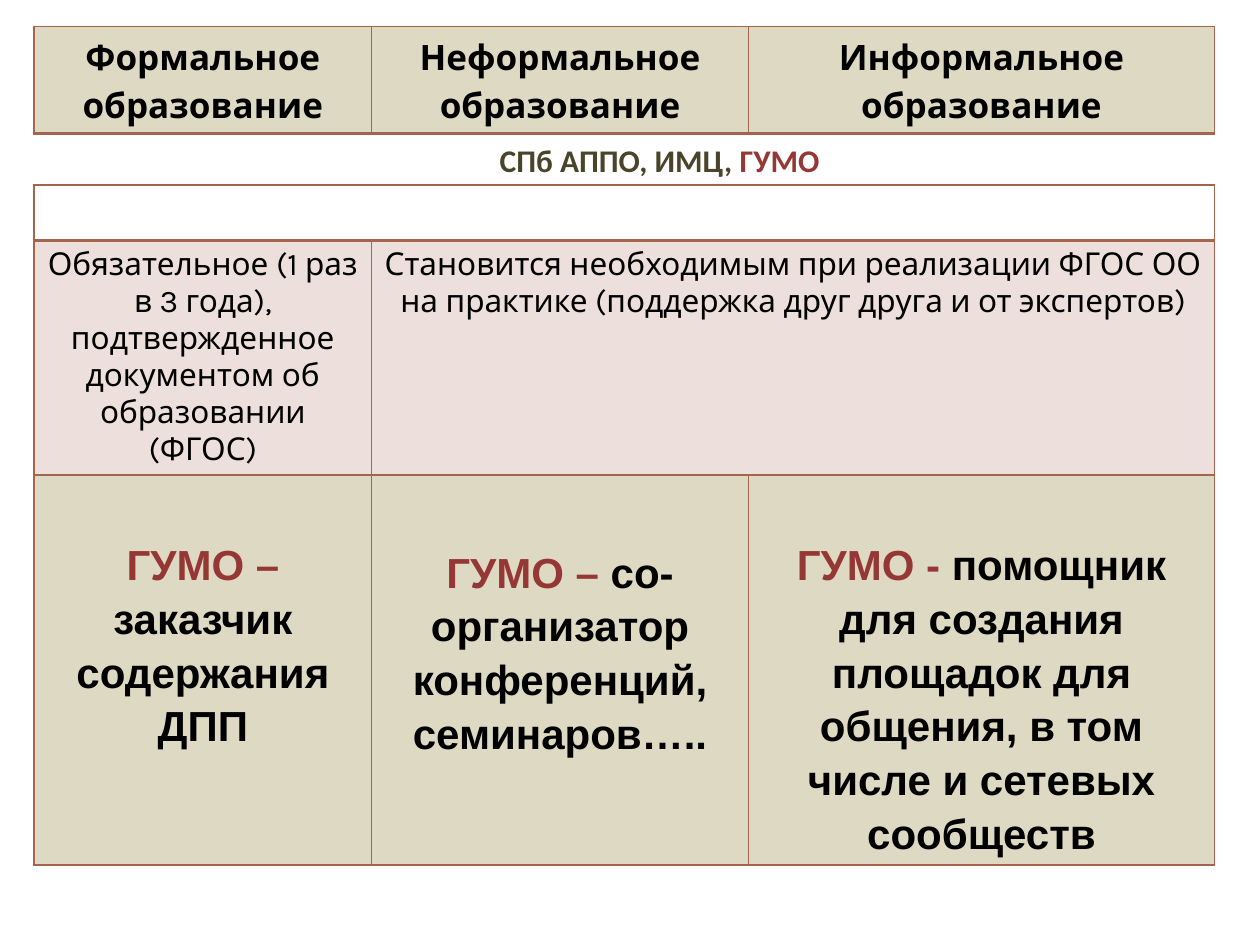
"""Build a slide comparing formal, non-formal and informal education."""
from lxml.etree import fromstring
from pptx import Presentation
from pptx.dml.color import RGBColor
from pptx.enum.text import MSO_AUTO_SIZE, PP_ALIGN
from pptx.util import Inches, Pt

NS = "http://schemas.openxmlformats.org/drawingml/2006/main"
RUST, RED, BLACK, SAND, PINK = "A5644E", "953735", "000000", "DDD9C3", "EDE0DC"


def write(frame, runs, font, size, bold, space=None):
    """Add centred runs of (text, colour) to the first paragraph."""
    para = frame.paragraphs[0]
    para.alignment = PP_ALIGN.CENTER
    para.line_spacing = space
    for text, color in runs:
        run = para.add_run()
        run.text = text
        run.font.name, run.font.size, run.font.bold = font, Pt(size), bold
        run.font.color.rgb = RGBColor.from_string(color)


def grid(top, rows, heavy):
    """Add a bordered table whose row number heavy has a thick bottom line."""
    height = Inches(sum(rows))
    table = slide.shapes.add_table(len(rows), 3, Inches(0.27), Inches(top), Inches(9.37), height).table
    table.first_row = table.horz_banding = False
    for col, width in zip(table.columns, (2.68, 2.99, 3.7)):
        col.width = Inches(width)
    for r, high in enumerate(rows):
        table.rows[r].height = Inches(high)
        for cell in table.rows[r].cells:
            cell.fill.background()
            props = cell._tc.get_or_add_tcPr()
            for i, side in enumerate("LRTB"):
                thick = (side == "B" and r == heavy) or (side == "T" and r == heavy + 1)
                props.insert(i, fromstring(
                    f'<a:ln{side} xmlns:a="{NS}" w="{Pt(2 if thick else 1)}"><a:solidFill>'
                    f'<a:srgbClr val="{RUST}"/></a:solidFill></a:ln{side}>'))
    return table


deck = Presentation()
deck.slide_width, deck.slide_height = Inches(10), Inches(7.5)
slide = deck.slides.add_slide(deck.slide_layouts[6])

main = grid(1.47, (0.44, 1.86, 3.03), 0)
main.cell(0, 0).merge(main.cell(0, 2))
main.cell(1, 1).merge(main.cell(1, 2))
head = grid(0.21, (0.84,), 0)

kinds = ("Формальное", "Неформальное", "Информальное")
tops = [(f"{kind} образование", BLACK) for kind in kinds]
needs = (
    "Обязательное (1 раз в 3 года), подтвержденное документом об образовании (ФГОС)",
    "Становится необходимым при реализации ФГОС ОО на практике (поддержка друг друга и от экспертов)",
)
roles = (
    ("ГУМО – ", "заказчик содержания ДПП", 0.07, 0.48),
    ("ГУМО – ", "со-организатор конференций, семинаров…..", 0.07, 0.54),
    ("ГУМО - ", "помощник для создания площадок для общения, в том числе и сетевых сообществ", 0.1, 0.48),
)

cells = []
for c, run in enumerate(tops):
    cells.append((head.cell(0, c), [run], "Karla", 20, True, 1.15, SAND, 0.07, 0.05))
for c, text in enumerate(needs):
    cells.append((main.cell(1, c), [(text, BLACK)], "Karla", 18, False, None, PINK, 0.1, 0.05))
for c, (name, text, side, top) in enumerate(roles):
    runs = [(name, RED), (text, BLACK)]
    cells.append((main.cell(2, c), runs, "Arial", 24, True, 1.15, SAND, side, top))

for cell, runs, font, size, bold, space, color, side, top in cells:
    cell.fill.solid()
    cell.fill.fore_color.rgb = RGBColor.from_string(color)
    cell.margin_left = cell.margin_right = Inches(side)
    cell.margin_top, cell.margin_bottom = Inches(top), Inches(0.05)
    write(cell.text_frame, runs, font, size, bold, space)

label = slide.shapes.add_textbox(Inches(3.5), Inches(1.07), Inches(3.47), Inches(0.4)).text_frame
label.word_wrap = True
label.auto_size = MSO_AUTO_SIZE.SHAPE_TO_FIT_TEXT
write(label, [("СПб АППО, ИМЦ, ", "4A452A"), ("ГУМО", RED)], "Calibri", 18, True)

deck.save("out.pptx")
